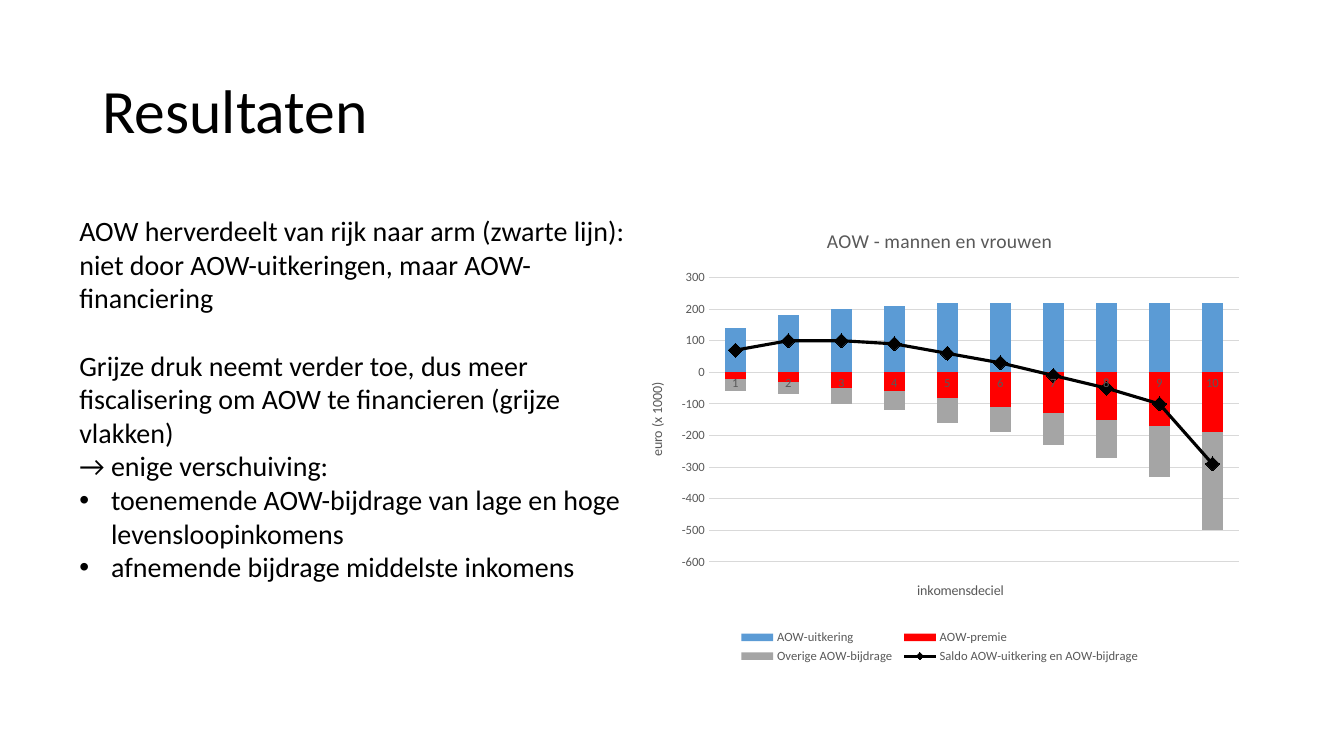
from lxml import etree
from pptx import Presentation
from pptx.chart.data import CategoryChartData
from pptx.dml.color import RGBColor
from pptx.enum.chart import (XL_CHART_TYPE, XL_LEGEND_POSITION,
                             XL_MARKER_STYLE, XL_TICK_MARK)
from pptx.enum.text import MSO_ANCHOR, MSO_AUTO_SIZE, PP_ALIGN
from pptx.oxml.ns import qn
from pptx.util import Cm, Pt

STACKED = XL_CHART_TYPE.COLUMN_STACKED
LEGEND_BOTTOM = XL_LEGEND_POSITION.BOTTOM
DIAMOND = XL_MARKER_STYLE.DIAMOND
NO_TICK = XL_TICK_MARK.NONE
MIDDLE = MSO_ANCHOR.MIDDLE
GROW = MSO_AUTO_SIZE.SHAPE_TO_FIT_TEXT
LEFT = PP_ALIGN.LEFT

FONT = "Calibri"
BLACK, GREY, GRID = "000000", "595959", "D9D9D9"
TITLE_ONLY = 5

COLUMNS = [
    ("AOW-uitkering", "5B9BD5",
     [140, 180, 200, 210, 220, 220, 220, 220, 220, 220]),
    ("AOW-premie", "FF0000",
     [-20, -30, -50, -60, -80, -110, -130, -150, -170, -190]),
    ("Overige AOW-bijdrage", "A5A5A5",
     [-40, -40, -50, -60, -80, -80, -100, -120, -160, -310]),
]
BALANCE = ("Saldo AOW-uitkering en AOW-bijdrage",
           [70, 100, 100, 90, 60, 30, -10, -50, -100, -290])

# Text, bullet, space before in points; \v is a line break
FINDINGS = [
    ("AOW herverdeelt van rijk naar arm (zwarte lijn): "
     "niet door AOW-uitkeringen, maar AOW-financiering", False, 0),
    ("Grijze druk neemt verder toe, dus meer fiscalisering om AOW "
     "te financieren (grijze vlakken)\v→ enige verschuiving:", False, 24),
    ("toenemende AOW-bijdrage van lage en hoge levensloopinkomens", True, 0),
    ("afnemende bijdrage middelste inkomens", True, 0),
]


def rgb(value):
    return RGBColor.from_string(value)


def format_font(font, size, color):
    font.name, font.size, font.bold = FONT, Pt(size), False
    font.color.rgb = rgb(color)


def write(paragraph, text, size=20, color=BLACK, bullet=False,
          before=0, spacing=1.0):
    paragraph.text = text
    paragraph.alignment = LEFT
    paragraph.space_before = Pt(before)
    paragraph.line_spacing = spacing
    for run in paragraph.runs:
        format_font(run.font, size, color)
    if bullet:
        properties = paragraph._p.get_or_add_pPr()
        properties.set("marL", str(Cm(0.8)))
        properties.set("indent", str(-Cm(0.8)))
        etree.SubElement(properties, qn("a:buFont"), typeface="Arial")
        etree.SubElement(properties, qn("a:buChar"), char="•")


def place(shape, left, top, width, height):
    shape.left, shape.top = left, top
    shape.width, shape.height = width, height


def add_title(slide, box):
    title = slide.shapes.title
    place(title, *box)
    title.text_frame.vertical_anchor = MIDDLE
    write(title.text_frame.paragraphs[0], "Resultaten", size=44, spacing=0.9)


def add_findings(slide, box):
    frame = slide.shapes.add_textbox(*box).text_frame
    frame.word_wrap = True
    frame.auto_size = GROW
    for index, (text, bullet, before) in enumerate(FINDINGS):
        paragraph = frame.add_paragraph() if index else frame.paragraphs[0]
        write(paragraph, text, bullet=bullet, before=before)


def set_layout(parent, position, **fractions):
    """Fix a chart part at fractions of the chart area."""
    for old in parent.findall(qn("c:layout")):
        parent.remove(old)
    layout = etree.Element(qn("c:layout"))
    manual = etree.SubElement(layout, qn("c:manualLayout"))
    if parent.tag == qn("c:plotArea"):
        etree.SubElement(manual, qn("c:layoutTarget"), val="inner")
    for name in ("xMode", "yMode"):
        etree.SubElement(manual, qn("c:" + name), val="edge")
    for name, value in fractions.items():
        etree.SubElement(manual, qn("c:" + name), val=str(value))
    parent.insert(position, layout)


def move_last_series_to_line(chart):
    """Turn the last column series into a line on the same axes."""
    bars = chart.element.find(".//" + qn("c:barChart"))
    series = bars.findall(qn("c:ser"))[-1]
    for invert in series.findall(qn("c:invertIfNegative")):
        series.remove(invert)
    line = etree.Element(qn("c:lineChart"))
    etree.SubElement(line, qn("c:grouping"), val="standard")
    etree.SubElement(line, qn("c:varyColors"), val="0")
    line.append(series)
    etree.SubElement(line, qn("c:marker"), val="1")
    for axis in bars.findall(qn("c:axId")):
        etree.SubElement(line, qn("c:axId"), val=axis.get("val"))
    bars.addnext(line)


def format_axis(axis, title):
    axis.major_tick_mark = axis.minor_tick_mark = NO_TICK
    format_font(axis.tick_labels.font, 9, GREY)
    paragraph = axis.axis_title.text_frame.paragraphs[0]
    paragraph.text = title
    format_font(paragraph.runs[0].font, 10, GREY)


def add_balance_chart(slide, box):
    data = CategoryChartData()
    data.categories = [str(decile) for decile in range(1, 11)]
    for name, _, values in COLUMNS:
        data.add_series(name, values)
    data.add_series(*BALANCE)
    chart = slide.shapes.add_chart(STACKED, *box, data).chart
    format_font(chart.font, 10, BLACK)
    move_last_series_to_line(chart)

    # Columns and line
    columns, line = chart.plots
    columns.gap_width, columns.overlap = 150, 100
    columns.vary_by_categories = False
    for series, (_, color, _) in zip(columns.series, COLUMNS):
        series.format.fill.solid()
        series.format.fill.fore_color.rgb = rgb(color)
    balance = line.series[0]
    balance.smooth = False
    balance.format.line.width = Pt(2.25)
    balance.format.line.color.rgb = rgb(BLACK)
    marker = balance.marker
    marker.style, marker.size = DIAMOND, 10
    marker.format.fill.solid()
    marker.format.fill.fore_color.rgb = rgb(BLACK)
    marker.format.line.color.rgb = rgb(BLACK)

    # Axes
    deciles, euros = chart.category_axis, chart.value_axis
    format_axis(deciles, "inkomensdeciel")
    format_axis(euros, "euro (x 1000)")
    euros.minimum_scale, euros.maximum_scale, euros.major_unit = -600, 300, 100
    euros.format.line.fill.background()
    for line_format in (deciles.format.line, euros.major_gridlines.format.line):
        line_format.width = Pt(0.75)
        line_format.color.rgb = rgb(GRID)

    # Title and legend
    chart.has_title = True
    heading = chart.chart_title.text_frame.paragraphs[0]
    heading.text = "AOW - mannen en vrouwen"
    format_font(heading.runs[0].font, 14, GREY)
    chart.has_legend = True
    chart.legend.position = LEGEND_BOTTOM
    chart.legend.include_in_layout = False
    format_font(chart.legend.font, 9, GREY)

    set_layout(chart.element.find(".//" + qn("c:plotArea")), 0,
               x=0.13, y=0.15, w=0.85, h=0.62)
    set_layout(chart.element.find(".//" + qn("c:legend")), 1,
               x=0.17, y=0.91, w=0.66, h=0.09)


def main():
    presentation = Presentation()
    presentation.slide_width, presentation.slide_height = Cm(33.87), Cm(19.05)
    layout = presentation.slide_layouts[TITLE_ONLY]
    slide = presentation.slides.add_slide(layout)
    add_title(slide, (Cm(2.33), Cm(1.01), Cm(29.21), Cm(3.68)))
    add_balance_chart(slide, (Cm(15.82), Cm(5.26), Cm(15.72), Cm(11.56)))
    add_findings(slide, (Cm(1.75), Cm(5.26), Cm(14.55), Cm(9.65)))
    presentation.save("out.pptx")


if __name__ == "__main__":
    main()
